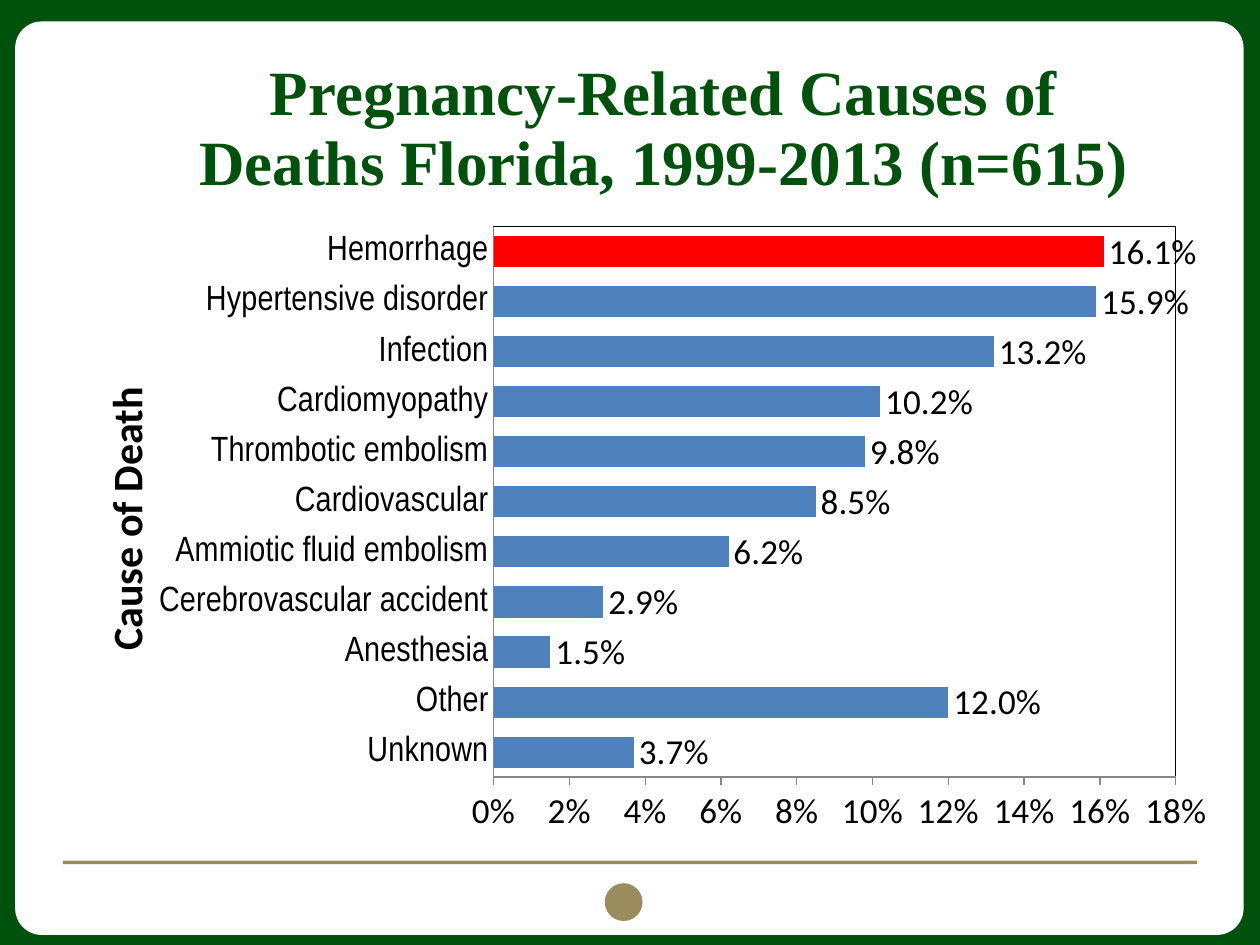
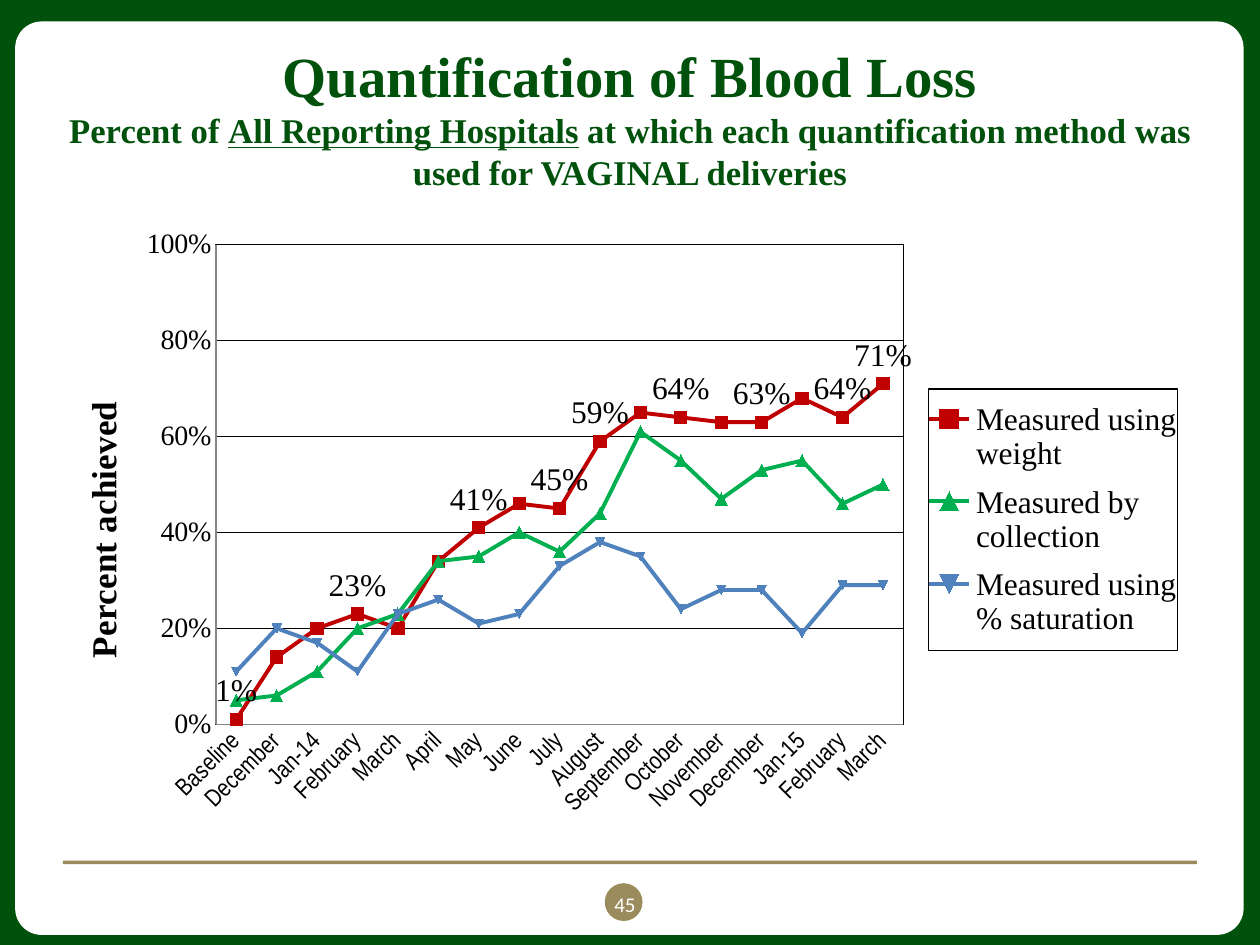
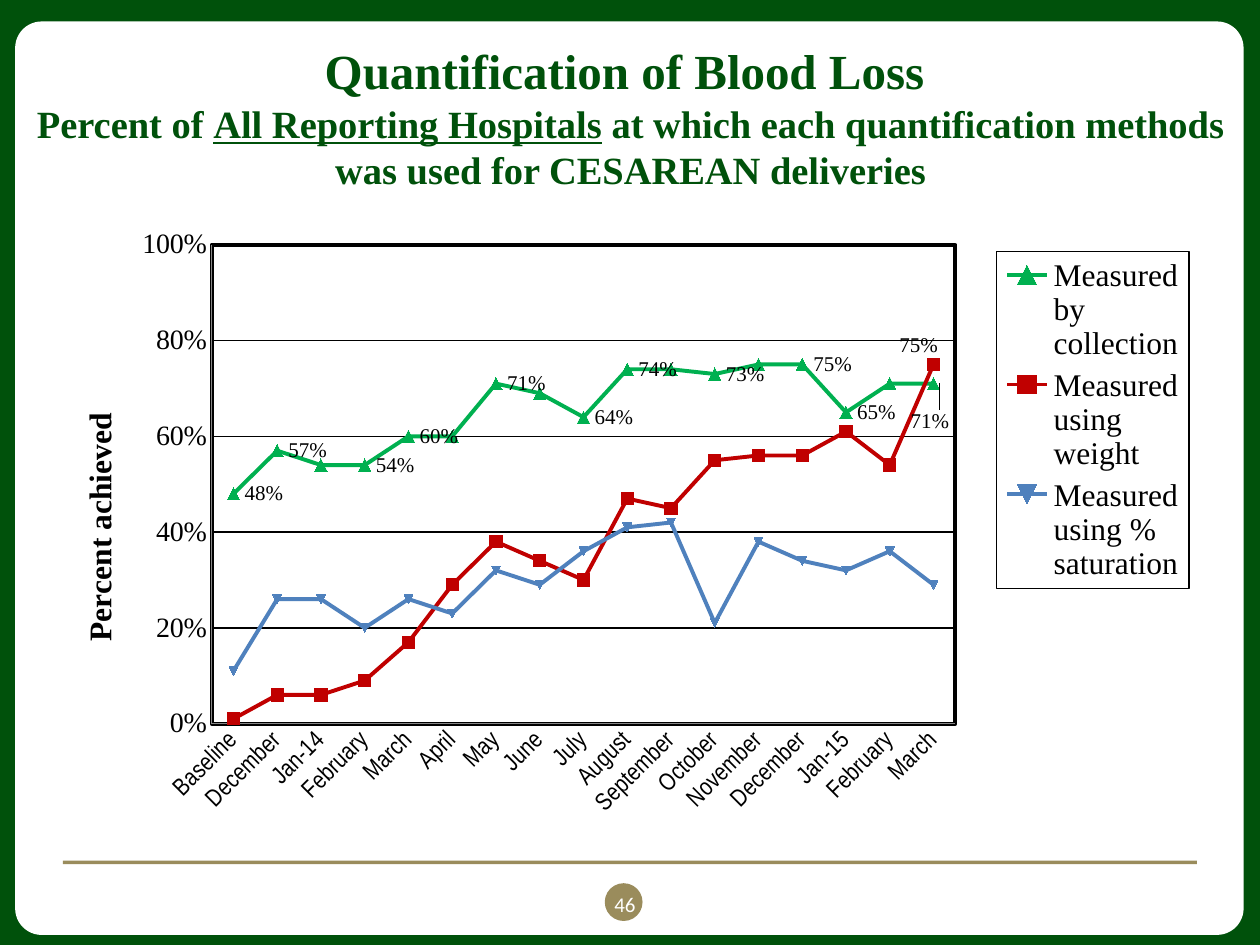
from dataclasses import dataclass

from pptx import Presentation
from pptx.chart.data import CategoryChartData
from pptx.dml.color import RGBColor
from pptx.enum.chart import (
    XL_CHART_TYPE,
    XL_LABEL_POSITION,
    XL_LEGEND_POSITION,
    XL_MARKER_STYLE,
    XL_TICK_MARK,
)
from pptx.enum.shapes import MSO_SHAPE
from pptx.enum.text import MSO_ANCHOR, PP_ALIGN
from pptx.oxml import parse_xml
from pptx.oxml.ns import nsdecls, qn
from pptx.util import Emu, Pt

BAR = XL_CHART_TYPE.BAR_CLUSTERED
LINE = XL_CHART_TYPE.LINE_MARKERS
ABOVE = XL_LABEL_POSITION.ABOVE
RIGHT = XL_LABEL_POSITION.RIGHT
OUTSIDE_END = XL_LABEL_POSITION.OUTSIDE_END
LEGEND_RIGHT = XL_LEGEND_POSITION.RIGHT
SQUARE = XL_MARKER_STYLE.SQUARE
TRIANGLE = XL_MARKER_STYLE.TRIANGLE
TICK_NONE = XL_TICK_MARK.NONE
TICK_OUT = XL_TICK_MARK.OUTSIDE
RECTANGLE = MSO_SHAPE.RECTANGLE
ROUNDED = MSO_SHAPE.ROUNDED_RECTANGLE
OVAL = MSO_SHAPE.OVAL
CENTER = PP_ALIGN.CENTER
MIDDLE = MSO_ANCHOR.MIDDLE

EMU_PER_PX = 9144
GREEN, GOLD, WHITE, BLACK = "00510B", "9A8C5C", "FFFFFF", "000000"
AXIS_GRAY, BLUE, RED = "868686", "4F81BD", "FF0000"
WEIGHT_RED, COLLECTION_GREEN = "C00000", "00B050"
SERIF, SANS, NARROW = "Times New Roman", "Calibri", "Arial Narrow"

CAUSES = {
    "Unknown": 0.037,
    "Other": 0.12,
    "Anesthesia": 0.015,
    "Cerebrovascular accident": 0.029,
    "Ammiotic fluid embolism": 0.062,
    "Cardiovascular": 0.085,
    "Thrombotic embolism": 0.098,
    "Cardiomyopathy": 0.102,
    "Infection": 0.132,
    "Hypertensive disorder": 0.159,
    "Hemorrhage": 0.161,
}
MONTHS = [
    "Baseline", "December", "Jan-14", "February", "March", "April", "May", "June", "July",
    "August", "September", "October", "November", "December", "Jan-15", "February", "March",
]


@dataclass(frozen=True)
class Area:
    left: int
    top: int
    width: int
    height: int


@dataclass(frozen=True)
class Band:
    preset: int
    area: Area
    color: str


@dataclass(frozen=True)
class Method:
    name: str
    color: str
    values: tuple
    marker: int | None = None
    labelled: tuple = ()
    shifts: tuple = ()


@dataclass(frozen=True)
class MethodSlide:
    number: str
    title_area: Area
    heading: str
    heading_size: float
    detail_size: float
    detail_end: str
    methods: tuple
    label_position: int
    label_size: int
    axis_title_size: int
    axis_title_place: tuple
    plot_place: tuple
    plot_border: float
    legend_place: tuple


BANDS = (
    Band(ROUNDED, Area(12, 17, 975, 725), WHITE),
    Band(OVAL, Area(480, 701, 30, 30), GOLD),
    Band(RECTANGLE, Area(50, 683, 900, 3), GOLD),
)
NUMBER_AREA = Area(475, 700, 42, 35)
CAUSES_AREA = Area(33, 25, 967, 708)
METHODS_AREA = Area(50, 175, 900, 495)

VAGINAL = MethodSlide(
    number="45",
    title_area=Area(25, 30, 950, 125),
    heading="Quantification of Blood Loss",
    heading_size=32.4,
    detail_size=19.8,
    detail_end=" at which each quantification method was used for VAGINAL deliveries",
    methods=(
        Method("Measured using weight", WEIGHT_RED,
               (0.01, 0.14, 0.2, 0.23, 0.2, 0.34, 0.41, 0.46, 0.45, 0.59, 0.65, 0.64, 0.63,
                0.63, 0.68, 0.64, 0.71),
               SQUARE, (0, 3, 6, 8, 9, 11, 13, 15, 16)),
        Method("Measured by collection", COLLECTION_GREEN,
               (0.05, 0.06, 0.11, 0.2, 0.23, 0.34, 0.35, 0.4, 0.36, 0.44, 0.61, 0.55, 0.47,
                0.53, 0.55, 0.46, 0.5),
               TRIANGLE),
        Method("Measured using % saturation", BLUE,
               (0.11, 0.2, 0.17, 0.11, 0.23, 0.26, 0.21, 0.23, 0.33, 0.38, 0.35, 0.24, 0.28,
                0.28, 0.19, 0.29, 0.29)),
    ),
    label_position=ABOVE,
    label_size=18,
    axis_title_size=20,
    axis_title_place=(0.01, 0.28),
    plot_place=(0.135, 0.039, 0.606, 0.769),
    plot_border=0.75,
    legend_place=(0.763, 0.27, 0.22, 0.42),
)
CESAREAN = MethodSlide(
    number="46",
    title_area=Area(17, 30, 967, 125),
    heading="Quantification of Blood Loss ",
    heading_size=28,
    detail_size=22,
    detail_end=" at which each quantification methods was used for CESAREAN deliveries",
    methods=(
        Method("Measured by collection", COLLECTION_GREEN,
               (0.48, 0.57, 0.54, 0.54, 0.6, 0.6, 0.71, 0.69, 0.64, 0.74, 0.74, 0.73, 0.75,
                0.75, 0.65, 0.71, 0.71),
               TRIANGLE, (0, 1, 3, 4, 6, 8, 9, 11, 13, 14, 16), ((16, -0.03, 0.06),)),
        Method("Measured using weight", WEIGHT_RED,
               (0.01, 0.06, 0.06, 0.09, 0.17, 0.29, 0.38, 0.34, 0.3, 0.47, 0.45, 0.55, 0.56,
                0.56, 0.61, 0.54, 0.75),
               SQUARE, (16,), ((16, -0.04, -0.03),)),
        Method("Measured using % saturation", BLUE,
               (0.11, 0.26, 0.26, 0.2, 0.26, 0.23, 0.32, 0.29, 0.36, 0.41, 0.42, 0.21, 0.38,
                0.34, 0.32, 0.36, 0.29)),
    ),
    label_position=RIGHT,
    label_size=12,
    axis_title_size=18,
    axis_title_place=(0.01, 0.3),
    plot_place=(0.131, 0.039, 0.656, 0.768),
    plot_border=2.25,
    legend_place=(0.823, 0.05, 0.17, 0.54),
)


def rgb(color: str) -> RGBColor:
    return RGBColor.from_string(color)


def emu(area: Area) -> tuple:
    return tuple(Emu(px * EMU_PER_PX)
                 for px in (area.left, area.top, area.width, area.height))


def style_font(font, name: str, size: float, color: str = BLACK, bold: bool = False) -> None:
    font.name = name
    font.size = Pt(size)
    font.color.rgb = rgb(color)
    font.bold = bold


def add_page(deck):
    page = deck.slides.add_slide(deck.slide_layouts[6])
    page.background.fill.solid()
    page.background.fill.fore_color.rgb = rgb(GREEN)
    for band in BANDS:
        shape = page.shapes.add_shape(band.preset, *emu(band.area))
        shape.shadow.inherit = False
        shape.fill.solid()
        shape.fill.fore_color.rgb = rgb(band.color)
        shape.line.fill.background()
        if band.preset == ROUNDED:
            shape.adjustments[0] = 0.029
    return page


def add_box(page, area: Area):
    frame = page.shapes.add_textbox(*emu(area)).text_frame
    frame.word_wrap = True
    frame.vertical_anchor = MIDDLE
    frame.margin_left = frame.margin_right = Emu(5 * EMU_PER_PX)
    para = frame.paragraphs[0]
    para.alignment = CENTER
    return para


def add_title(page, content: MethodSlide) -> None:
    para = add_box(page, content.title_area)
    para.text = content.heading
    style_font(para.runs[0].font, SERIF, content.heading_size, GREEN, True)
    para.add_line_break()
    details = ("Percent of ", "All Reporting Hospitals", content.detail_end)
    for text in details:
        span = para.add_run()
        span.text = text
        style_font(span.font, SERIF, content.detail_size, GREEN, True)
        span.font.underline = text == details[1]


def add_number(page, number: str) -> None:
    para = add_box(page, NUMBER_AREA)
    para.text = number
    style_font(para.runs[0].font, SANS, 12, WHITE)


def place(parent, index: int, spot: tuple, inner: bool = False) -> None:
    for layout in parent.findall(qn("c:layout")):
        parent.remove(layout)
    settings = [("layoutTarget", "inner")] if inner else []
    if parent.tag != qn("c:dLbl"):
        settings += [("xMode", "edge"), ("yMode", "edge")]
    settings += zip("xywh", spot)
    parts = "".join(f'<c:{tag} val="{value}"/>' for tag, value in settings)
    parent.insert(index, parse_xml(
        f'<c:layout {nsdecls("c")}><c:manualLayout>{parts}</c:manualLayout></c:layout>'))


def outline(points: float):
    return parse_xml(
        f'<c:spPr {nsdecls("c", "a")}><a:noFill/><a:ln w="{Pt(points)}"><a:solidFill>'
        f'<a:srgbClr val="{BLACK}"/></a:solidFill></a:ln></c:spPr>')


def set_rotation(parent, degrees: int) -> None:
    body = next(parent.iter(qn("a:bodyPr")))
    body.set("rot", str(degrees * 60000))
    body.set("vert", "horz")


def set_title(title, text: str, name: str, size: int, spot: tuple, color: str = BLACK) -> None:
    title.text_frame.text = text
    style_font(title.text_frame.paragraphs[0].runs[0].font, name, size, color, True)
    place(title.element, 1, spot)


def style_axis(axis, name: str, size: int, tick: int) -> None:
    axis.major_tick_mark = tick
    axis.minor_tick_mark = TICK_NONE
    axis.has_major_gridlines = False
    axis.format.line.color.rgb = rgb(AXIS_GRAY)
    axis.format.line.width = Pt(0.75)
    style_font(axis.tick_labels.font, name, size)


def add_chart(page, kind: int, area: Area, data: CategoryChartData, font: str, size: int,
              plot_place: tuple, border: float, maximum: float, step: float):
    chart = page.shapes.add_chart(kind, *emu(area), data).chart
    style_font(chart.font, font, size)
    chart.has_title = False
    chart.has_legend = False
    chart.plots[0].vary_by_categories = False
    plot_area = next(chart.element.iter(qn("c:plotArea")))
    place(plot_area, 0, plot_place, True)
    plot_area.append(outline(border))
    axis = chart.value_axis
    axis.minimum_scale = 0
    axis.maximum_scale = maximum
    axis.major_unit = step
    axis.tick_labels.number_format = "0%"
    axis.tick_labels.number_format_is_linked = False
    return chart


def add_causes(page) -> None:
    data = CategoryChartData(number_format="0.0%")
    data.categories = list(CAUSES)
    data.add_series("Series 1", list(CAUSES.values()))
    chart = add_chart(page, BAR, CAUSES_AREA, data, SANS, 10,
                      (0.371, 0.219, 0.56, 0.617), 0.75, 0.18, 0.02)
    chart.has_title = True
    set_title(chart.chart_title, "Pregnancy-Related Causes of Deaths Florida, 1999-2013 (n=615)",
              SERIF, 36, (0.12, 0.01), GREEN)
    style_axis(chart.category_axis, NARROW, 20, TICK_NONE)
    style_axis(chart.value_axis, SANS, 20, TICK_OUT)
    axis_title = chart.category_axis.axis_title
    set_title(axis_title, "Cause of Death", SANS, 24, (0.04, 0.39))
    set_rotation(axis_title.element, -90)
    plot = chart.plots[0]
    plot.gap_width = 61
    series = plot.series[0]
    bars = [(series, BLUE), (series.points[len(CAUSES) - 1], RED)]
    for bar, color in bars:
        bar.format.fill.solid()
        bar.format.fill.fore_color.rgb = rgb(color)
    labels = series.data_labels
    labels.show_value = True
    labels.number_format = "0.0%"
    labels.number_format_is_linked = False
    labels.position = OUTSIDE_END
    style_font(labels.font, SANS, 20)


def style_method(series, method: Method, content: MethodSlide) -> None:
    series.smooth = False
    series.format.line.color.rgb = rgb(method.color)
    series.format.line.width = Pt(2.25)
    if method.marker is not None:
        marker = series.marker
        marker.style = method.marker
        marker.size = 7
        marker.format.fill.solid()
        marker.format.fill.fore_color.rgb = rgb(method.color)
        marker.format.line.color.rgb = rgb(method.color)
    if not method.labelled:
        return
    series.data_labels.show_value = False
    for index in method.labelled:
        label = series.points[index].data_label
        style_font(label.font, SERIF, content.label_size)
        label.position = content.label_position


def shift_labels(series_xml, method: Method) -> None:
    marks = {int(mark.find(qn("c:idx")).get("val")): mark
             for mark in series_xml.iter(qn("c:dLbl"))}
    for index, across, down in method.shifts:
        place(marks[index], 1, (across, down))


def add_methods(page, content: MethodSlide) -> None:
    data = CategoryChartData(number_format="0%")
    data.categories = MONTHS
    for method in content.methods:
        data.add_series(method.name, method.values)
    chart = add_chart(page, LINE, METHODS_AREA, data, SERIF, 12,
                      content.plot_place, content.plot_border, 1, 0.2)
    style_axis(chart.category_axis, NARROW, 14, TICK_NONE)
    set_rotation(next(chart.element.iter(qn("c:catAx"))), -45)
    axis = chart.value_axis
    style_axis(axis, SERIF, 16, TICK_NONE)
    axis.has_major_gridlines = True
    axis.major_gridlines.format.line.color.rgb = rgb(BLACK)
    axis.major_gridlines.format.line.width = Pt(0.75)
    set_title(axis.axis_title, "Percent achieved", SERIF, content.axis_title_size,
              content.axis_title_place)
    set_rotation(axis.axis_title.element, -90)
    chart.has_legend = True
    chart.legend.position = LEGEND_RIGHT
    chart.legend.include_in_layout = False
    style_font(chart.legend.font, SERIF, 18)
    legend = next(chart.element.iter(qn("c:legend")))
    place(legend, 1, content.legend_place)
    legend.find(qn("c:overlay")).addnext(outline(0.75))
    series_nodes = chart.element.iter(qn("c:ser"))
    for series, node, method in zip(chart.plots[0].series, series_nodes, content.methods):
        style_method(series, method, content)
        shift_labels(node, method)


def main() -> None:
    deck = Presentation()
    deck.slide_width = Emu(1000 * EMU_PER_PX)
    deck.slide_height = Emu(750 * EMU_PER_PX)
    add_causes(add_page(deck))
    for content in (VAGINAL, CESAREAN):
        page = add_page(deck)
        add_title(page, content)
        add_number(page, content.number)
        add_methods(page, content)
    deck.save("out.pptx")


if __name__ == "__main__":
    main()
